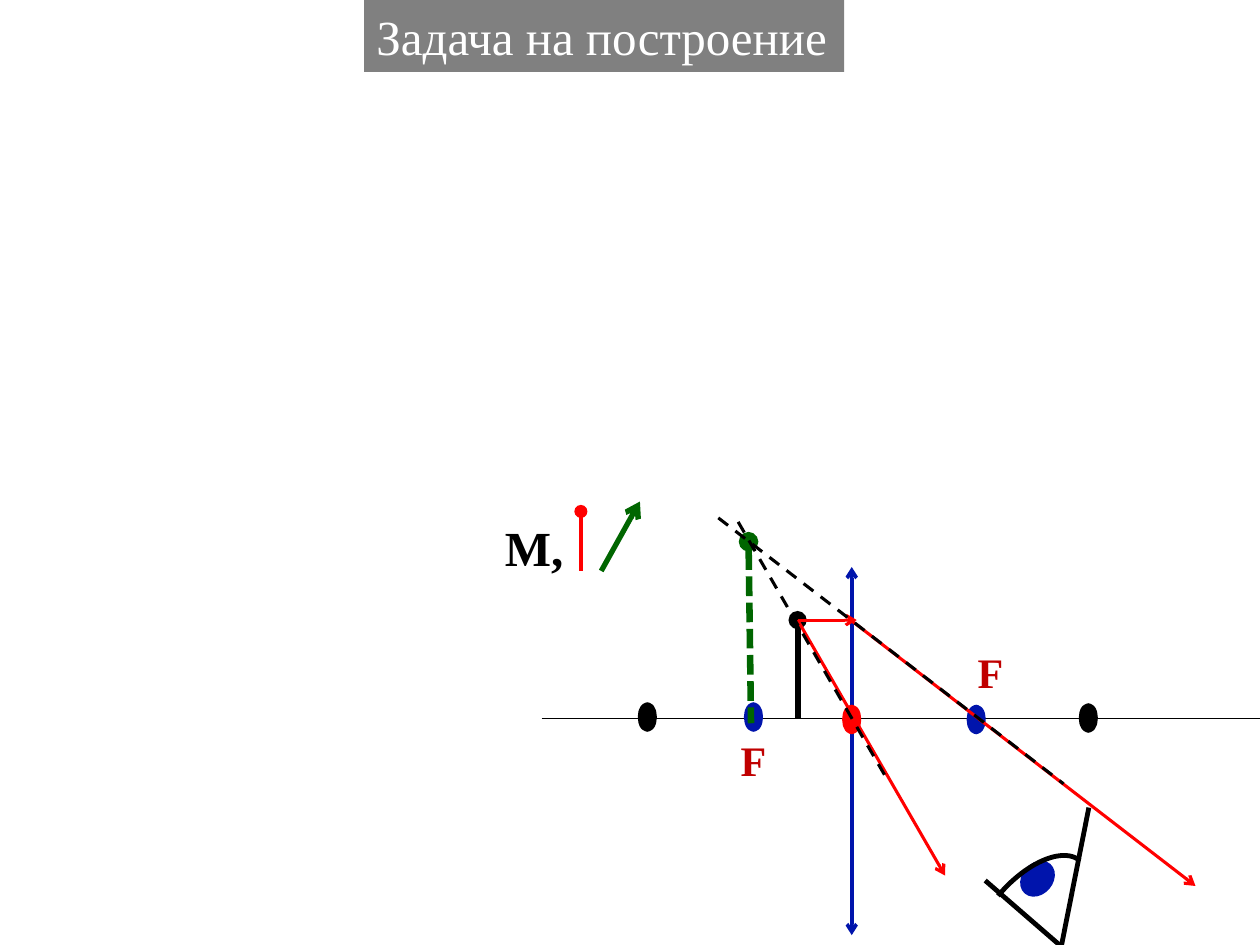
from lxml.etree import SubElement
from pptx import Presentation
from pptx.dml.color import RGBColor
from pptx.enum.dml import MSO_LINE
from pptx.enum.shapes import MSO_CONNECTOR, MSO_SHAPE
from pptx.oxml.ns import qn
from pptx.util import Cm, Pt

BLACK, WHITE, GRAY = "000000", "FFFFFF", "808080"
RED, DARK_RED, BLUE, GREEN = "FF0000", "C00000", "0014AC", "006600"
DASH, SHORT_DASH = MSO_LINE.DASH, MSO_LINE.SQUARE_DOT


def color(value):
    return RGBColor.from_string(value)


def add_text(text, left, top, width, height, size=24, ink=BLACK,
             bold=True, fill=None, wrap=True):
    box = page.shapes.add_textbox(Cm(left), Cm(top), Cm(width), Cm(height))
    if fill:
        box.fill.solid()
        box.fill.fore_color.rgb = color(fill)
    box.text_frame.word_wrap = wrap
    span = box.text_frame.paragraphs[0].add_run()
    span.text = text
    span.font.name = "Times New Roman"
    span.font.size = Pt(size)
    span.font.bold = bold
    span.font.color.rgb = color(ink)


deck = Presentation()
deck.slide_width, deck.slide_height = Cm(25.4), Cm(19.05)
page = deck.slides.add_slide(deck.slide_layouts[6])

# Lines: x1, y1, x2, y2, colour, width, dash, start end, finish end
sample_and_axes = [
    (11.71, 10.31, 11.71, 11.51, RED, 2.5, None, "oval", None),
    (17.17, 11.43, 17.17, 18.85, BLUE, 2, None, "arrow", "arrow"),
    (10.92, 14.48, 26.19, 14.48, BLACK, 0.79, None, None, None),
]
object_rays_and_image = [
    (16.08, 12.5, 16.08, 14.48, BLACK, 3.5, None, "oval", None),
    (16.08, 12.5, 17.27, 12.5, RED, 1.75, None, None, "arrow"),
    (17.15, 12.5, 24.1, 17.86, RED, 1.75, None, None, "arrow"),
    (16.08, 12.5, 19.05, 17.65, RED, 1.75, None, None, "arrow"),
    (15.09, 10.92, 15.14, 14.58, GREEN, 3.75, SHORT_DASH, "oval", None),
    (12.12, 11.51, 12.9, 10.11, GREEN, 3, None, None, "arrow"),
    (14.48, 10.44, 21.44, 15.8, BLACK, 1.75, DASH, None, None),
    (14.88, 10.52, 17.86, 15.67, BLACK, 1.75, DASH, None, None),
]
eyelids = [
    (21.36, 19.05, 19.86, 17.75, BLACK, 2.75, None, None, None),
    (21.39, 19.1, 21.95, 16.28, BLACK, 2.75, None, None, None),
]

# Ovals: left, top, width, height, colour, outline width, rotation
axis_points = [
    (left, top, 0.2, 0.41, ink, 5.25, 0)
    for left, top, ink in [
        (17.07, 14.3, RED), (15.09, 14.25, BLUE), (12.95, 14.25, BLACK),
        (21.84, 14.27, BLACK), (19.58, 14.3, BLUE),
    ]
]
pupil = [(20.65, 17.37, 0.53, 0.69, BLUE, 2.75, 40.9)]

# Layers from back to front
eye = page.shapes.add_group_shape()
layers = [
    (page, sample_and_axes, axis_points),
    (page, object_rays_and_image, []),
    (eye, eyelids, pupil),
]
for parent, lines, ovals in layers:
    for x1, y1, x2, y2, ink, width, dash, start, finish in lines:
        line = parent.shapes.add_connector(
            MSO_CONNECTOR.STRAIGHT, Cm(x1), Cm(y1), Cm(x2), Cm(y2))
        line.line.color.rgb = color(ink)
        line.line.width = Pt(width)
        if dash:
            line.line.dash_style = dash
        properties = line.element.spPr
        outline = properties.find(qn("a:ln"))
        for tag, end in (("a:headEnd", start), ("a:tailEnd", finish)):
            if end:
                SubElement(outline, qn(tag), type=end)
        SubElement(properties, qn("a:effectLst"))

    for left, top, width, height, ink, outline_width, rotation in ovals:
        oval = parent.shapes.add_shape(
            MSO_SHAPE.OVAL, Cm(left), Cm(top), Cm(width), Cm(height))
        oval.shadow.inherit = False
        oval.rotation = rotation
        oval.fill.solid()
        oval.fill.fore_color.rgb = color(ink)
        oval.line.color.rgb = color(ink)
        oval.line.width = Pt(outline_width)

# Curved front of the eye, sampled from a cubic curve
controls = [(21.77, 17.35), (21.44, 17.07), (20.7, 17.37), (20.12, 18.06)]
steps = 24
curve = []
for step in range(steps + 1):
    t = step / steps
    weights = [(1 - t) ** 3, 3 * t * (1 - t) ** 2, 3 * t ** 2 * (1 - t), t ** 3]
    curve.append(tuple(
        Cm(sum(weight * point[axis] for weight, point in zip(weights, controls)))
        for axis in (0, 1)))
builder = eye.shapes.build_freeform(*curve[0])
builder.add_line_segments(curve[1:], close=False)
cornea = builder.convert_to_shape()
cornea.shadow.inherit = False
cornea.fill.background()
cornea.line.color.rgb = color(BLACK)
cornea.line.width = Pt(2.75)

# Labels and title
add_text("М,", 9.93, 10.31, 1.78, 1.45, size=28)
add_text("F", 14.68, 14.68, 1.19, 1.27, ink=DARK_RED)
add_text("F", 19.46, 12.9, 1.19, 1.27, ink=DARK_RED)
add_text("Задача на построение", 7.34, 0, 9.68, 1.45, size=28,
         ink=WHITE, bold=False, fill=GRAY, wrap=False)

deck.save("out.pptx")
